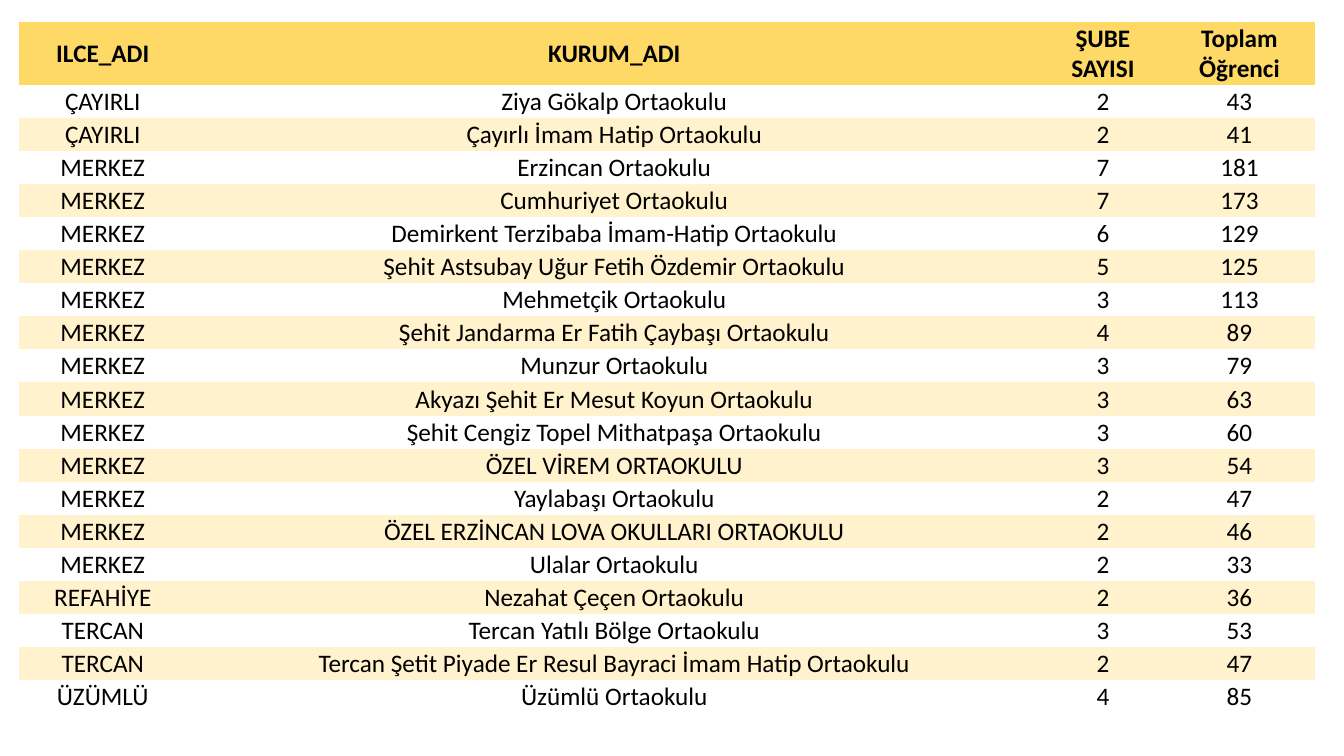
from pptx import Presentation
from pptx.dml.color import RGBColor
from pptx.enum.text import MSO_ANCHOR as Anchor, PP_ALIGN as Align
from pptx.oxml.ns import qn
from pptx.util import Cm, Pt

HEAD = ("ILCE_ADI", "KURUM_ADI", "ŞUBE SAYISI", "Toplam Öğrenci")
SCHOOLS = [
    ("ÇAYIRLI", "Ziya Gökalp Ortaokulu", 2, 43),
    ("ÇAYIRLI", "Çayırlı İmam Hatip Ortaokulu", 2, 41),
    ("MERKEZ", "Erzincan Ortaokulu", 7, 181),
    ("MERKEZ", "Cumhuriyet Ortaokulu", 7, 173),
    ("MERKEZ", "Demirkent Terzibaba İmam-Hatip Ortaokulu", 6, 129),
    ("MERKEZ", "Şehit Astsubay Uğur Fetih Özdemir Ortaokulu", 5, 125),
    ("MERKEZ", "Mehmetçik Ortaokulu", 3, 113),
    ("MERKEZ", "Şehit Jandarma Er Fatih Çaybaşı Ortaokulu", 4, 89),
    ("MERKEZ", "Munzur Ortaokulu", 3, 79),
    ("MERKEZ", "Akyazı Şehit Er Mesut Koyun Ortaokulu", 3, 63),
    ("MERKEZ", "Şehit Cengiz Topel Mithatpaşa Ortaokulu", 3, 60),
    ("MERKEZ", "ÖZEL VİREM ORTAOKULU", 3, 54),
    ("MERKEZ", "Yaylabaşı Ortaokulu", 2, 47),
    ("MERKEZ", "ÖZEL ERZİNCAN LOVA OKULLARI ORTAOKULU", 2, 46),
    ("MERKEZ", "Ulalar Ortaokulu", 2, 33),
    ("REFAHİYE", "Nezahat Çeçen Ortaokulu", 2, 36),
    ("TERCAN", "Tercan Yatılı Bölge Ortaokulu", 3, 53),
    ("TERCAN", "Tercan Şetit Piyade Er Resul Bayraci İmam Hatip Ortaokulu", 2, 47),
    ("ÜZÜMLÜ", "Üzümlü Ortaokulu", 4, 85),
]
WIDTHS = (4.22, 21.56, 3.07, 3.81)
LEFT, TOP, HIGH, HEAD_H = 0.48, 0.56, 17.42, 1.58
GOLD, CREAM, BLACK = "FFD966", "FFF2CC", "000000"
PLAIN = "{2D5ABB26-0587-4C30-8999-92F81FD0307C}"


def color(code):
    return RGBColor.from_string(code)


def paint(cell, shade):
    if shade:
        cell.fill.solid()
        cell.fill.fore_color.rgb = color(shade)
    else:
        cell.fill.background()


def write(cell, text, bold):
    cell.vertical_anchor = Anchor.MIDDLE
    cell.margin_left = cell.margin_right = cell.margin_top = Cm(0.02)
    cell.margin_bottom = 0
    para = cell.text_frame.paragraphs[0]
    para.text = str(text)
    para.alignment = Align.CENTER
    font = para.runs[0].font
    font.name, font.size, font.bold = "Calibri", Pt(18), bold
    font.color.rgb = color(BLACK)


def main():
    deck = Presentation()
    deck.slide_width, deck.slide_height = Cm(33.87), Cm(19.05)
    slide = deck.slides.add_slide(deck.slide_layouts[6])

    rows = [HEAD, *SCHOOLS]
    frame = slide.shapes.add_table(
        len(rows), len(HEAD), Cm(LEFT), Cm(TOP), Cm(sum(WIDTHS)), Cm(HIGH))
    table = frame.table
    table.horz_banding = False
    for style in frame._element.iter(qn("a:tableStyleId")):
        style.text = PLAIN

    for col, width in zip(table.columns, WIDTHS):
        col.width = Cm(width)
    row_h = (HIGH - HEAD_H) / len(SCHOOLS)
    for r, values in enumerate(rows):
        table.rows[r].height = Cm(row_h if r else HEAD_H)
        shade = GOLD if r == 0 else CREAM if r % 2 == 0 else None
        for cell, text in zip(table.rows[r].cells, values):
            paint(cell, shade)
            write(cell, text, r == 0)

    deck.save("out.pptx")


if __name__ == "__main__":
    main()
